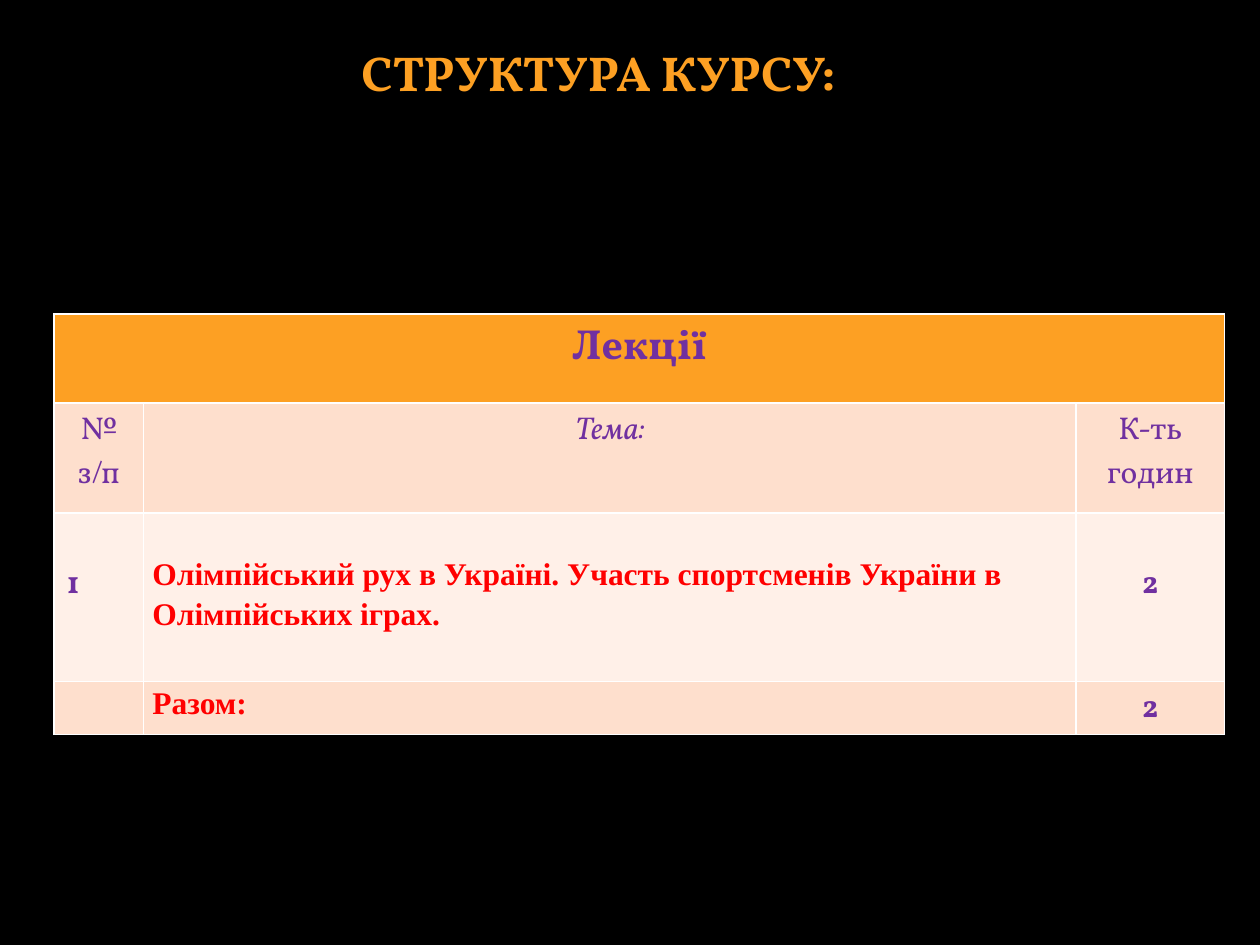
import pptx
import pptx.dml.color
import pptx.enum.text
import pptx.oxml
import pptx.oxml.ns
import pptx.util
from pptx.util import Inches

COLORS = {
    "background": "000000",
    "orange": "FDA023",
    "purple": "7030A0",
    "red": "FF0000",
    "peach": "FEDFCD",
    "cream": "FFF0E8",
    "border": "FFFFFF",
}
ALIGN = pptx.enum.text.PP_ALIGN
TOPIC = {"font": "Times New Roman", "color": "red", "bold": True,
         "align": ALIGN.LEFT, "line_spacing": 1.15}


def rgb(name):
    return pptx.dml.color.RGBColor.from_string(COLORS[name])


def write_text(text_frame, text, size=18, font="Vollkorn", color="purple",
               bold=False, italic=False, align=ALIGN.CENTER, line_spacing=None):
    paragraph = text_frame.paragraphs[0]
    paragraph.alignment = align
    if line_spacing:
        paragraph.line_spacing = line_spacing
    run = paragraph.add_run()
    run.text = text
    run.font.size = pptx.util.Pt(size)
    run.font.name = font
    run.font.bold = bold
    run.font.italic = italic
    run.font.color.rgb = rgb(color)


def set_borders(cell, color="border", width=1):
    properties = cell._tc.get_or_add_tcPr()
    for index, side in enumerate(("lnL", "lnR", "lnT", "lnB")):
        line = pptx.oxml.parse_xml(
            f'<a:{side} {pptx.oxml.ns.nsdecls("a")} w="{pptx.util.Pt(width)}">'
            f'<a:solidFill><a:srgbClr val="{COLORS[color]}"/></a:solidFill></a:{side}>')
        properties.insert(index, line)


def set_margins(cell, side=0.1, top=0.05, bottom=0.02):
    cell.margin_left = cell.margin_right = Inches(side)
    cell.margin_top = Inches(top)
    cell.margin_bottom = Inches(bottom)


def add_title(slide, left, top, width, height):
    title = slide.shapes.title
    title.left, title.top, title.width, title.height = left, top, width, height
    text_frame = title.text_frame
    text_frame.word_wrap = True
    text_frame.auto_size = pptx.enum.text.MSO_AUTO_SIZE.SHAPE_TO_FIT_TEXT
    text_frame.vertical_anchor = pptx.enum.text.MSO_ANCHOR.TOP
    write_text(text_frame, "СТРУКТУРА КУРСУ:", size=28, color="orange", bold=True)


def add_lecture_table(slide, left, top, width, height):
    column_widths = (0.71, 7.4, 1.18)
    row_heights = (0.71, 0.87, 1.34, 0.42)
    row_fills = ("orange", "peach", "cream", "peach")
    table = slide.shapes.add_table(
        len(row_heights), len(column_widths), left, top, width, height).table
    for column, column_width in zip(table.columns, column_widths):
        column.width = Inches(column_width)
    for row, row_height, fill in zip(table.rows, row_heights, row_fills):
        row.height = Inches(row_height)
        for cell in row.cells:
            cell.fill.solid()
            cell.fill.fore_color.rgb = rgb(fill)
            set_borders(cell)
            set_margins(cell)
    table.cell(0, 0).merge(table.cell(0, 2))

    contents = (
        (0, 0, "Лекції", {"size": 24, "bold": True}, {}),
        (1, 0, "№ з/п", {}, {}),
        (1, 1, "Тема:", {"italic": True}, {}),
        (1, 2, "К-ть годин", {}, {}),
        (2, 0, "1", {"bold": True, "align": ALIGN.LEFT}, {"top": 0.4}),
        (2, 1, "Олімпійський рух в Україні. Участь спортсменів України в "
               "Олімпійських іграх.", TOPIC, {"side": 0.07, "top": 0.31, "bottom": 0}),
        (2, 2, "2", {"bold": True}, {"top": 0.4}),
        (3, 1, "Разом:", TOPIC, {"side": 0.07, "top": 0, "bottom": 0}),
        (3, 2, "2", {"bold": True}, {}),
    )
    for row, column, text, text_format, margins in contents:
        cell = table.cell(row, column)
        set_margins(cell, **margins)
        write_text(cell.text_frame, text, **text_format)


def main():
    presentation = pptx.Presentation()
    presentation.slide_width = Inches(10)
    presentation.slide_height = Inches(7.5)
    slide = presentation.slides.add_slide(presentation.slide_layouts[5])
    slide.background.fill.solid()
    slide.background.fill.fore_color.rgb = rgb("background")
    add_title(slide, Inches(2.25), Inches(0.29), Inches(5), Inches(0.57))
    add_lecture_table(slide, Inches(0.43), Inches(2.49), Inches(9.29), Inches(3.34))
    presentation.save("out.pptx")


if __name__ == "__main__":
    main()
